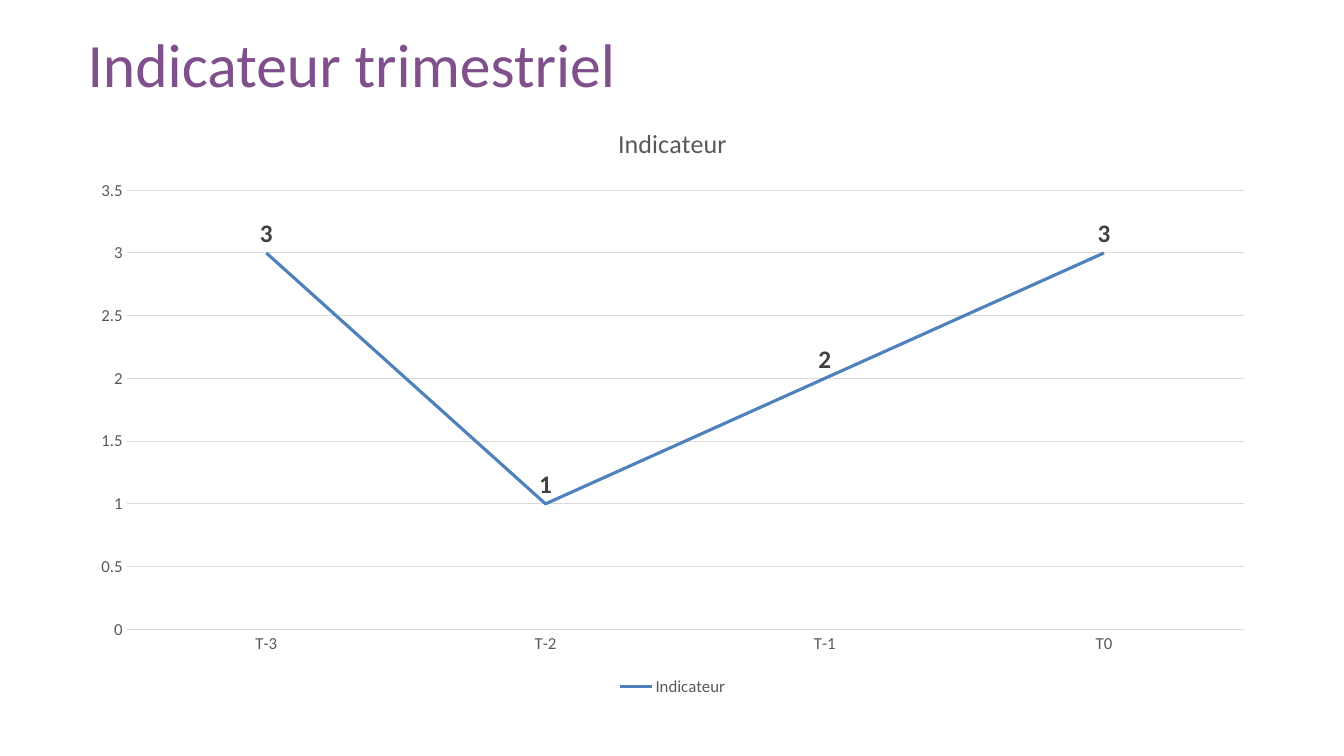
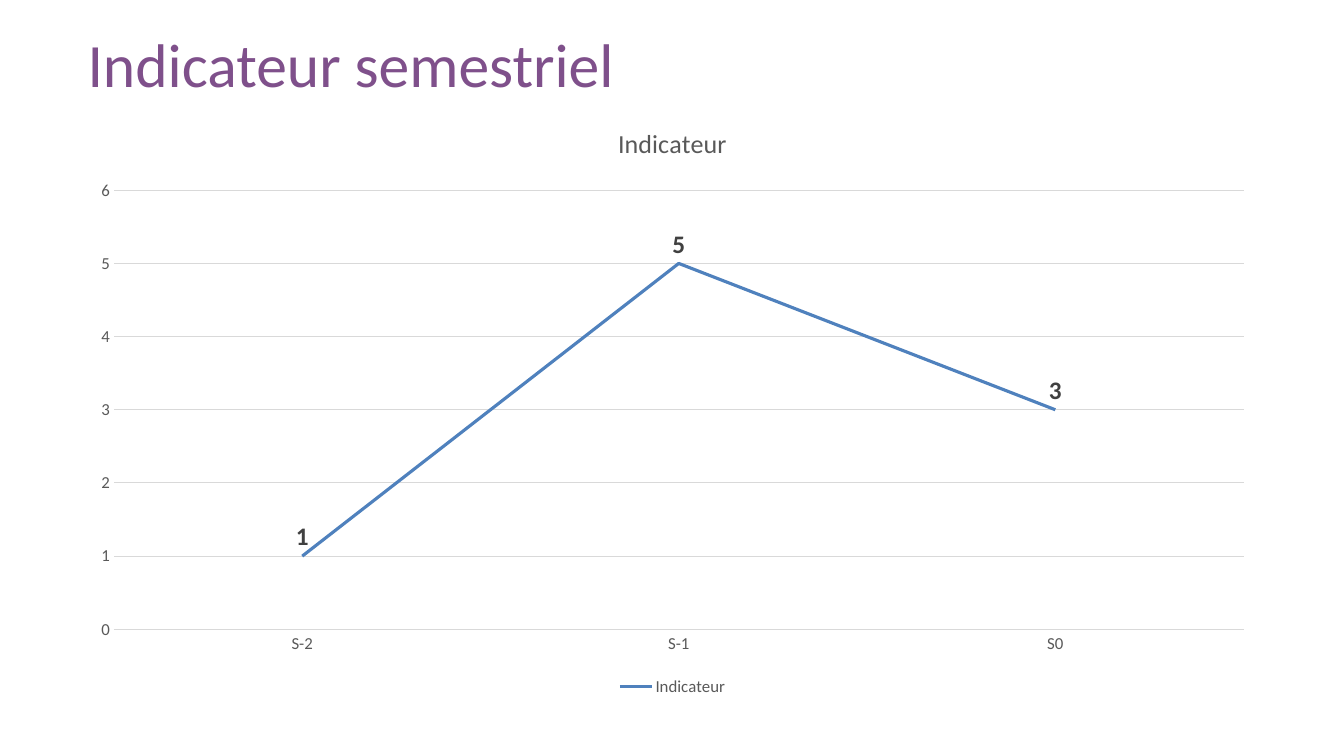
from dataclasses import dataclass

from pptx import Presentation
from pptx.chart.data import CategoryChartData
from pptx.dml.color import RGBColor
from pptx.enum.chart import (XL_CHART_TYPE as ChartType, XL_LABEL_POSITION as LabelPosition,
                             XL_LEGEND_POSITION as LegendPosition, XL_MARKER_STYLE as Marker,
                             XL_TICK_MARK as TickMark)
from pptx.enum.text import MSO_ANCHOR as Anchor
from pptx.util import Inches, Pt

FONT = "Calibri"
PURPLE, BLUE, LIGHT_GRAY = "7F508B", "4F81BD", "D9D9D9"
GRAY, DARK_GRAY = "595959", "404040"
LEFT, WIDTH = Inches(0.77), Inches(11.8)
SERIES_NAME = "Indicateur"


@dataclass(frozen=True)
class IndicatorSlide:
    title: str
    values: dict[str, int]
    axis_maximum: float
    axis_step: float


SLIDES = [
    IndicatorSlide("Indicateur trimestriel", {"T-3": 3, "T-2": 1, "T-1": 2, "T0": 3}, 3.5, 0.5),
    IndicatorSlide("Indicateur semestriel", {"S-2": 1, "S-1": 5, "S0": 3}, 6, 1),
]


def rgb(color: str) -> RGBColor:
    return RGBColor.from_string(color)


def style_font(font, size: float, color: str, bold: bool = False) -> None:
    font.name = FONT
    font.size = Pt(size)
    font.bold = bold
    font.color.rgb = rgb(color)


def style_line(line, color: str, width: float) -> None:
    line.color.rgb = rgb(color)
    line.width = Pt(width)


def add_title(page, text: str) -> None:
    box = page.shapes.add_textbox(LEFT, Inches(0.18), WIDTH, Inches(0.98))
    frame = box.text_frame
    frame.word_wrap = True
    frame.vertical_anchor = Anchor.MIDDLE
    para = frame.paragraphs[0]
    para.text = text
    para.line_spacing = 0.9
    style_font(para.font, 44, PURPLE)


def style_axes(chart, maximum: float, step: float) -> None:
    for axis in (chart.category_axis, chart.value_axis):
        axis.major_tick_mark = axis.minor_tick_mark = TickMark.NONE
        style_font(axis.tick_labels.font, 12, GRAY)
    style_line(chart.category_axis.format.line, LIGHT_GRAY, 0.75)
    value_axis = chart.value_axis
    value_axis.minimum_scale = 0
    value_axis.maximum_scale = maximum
    value_axis.major_unit = step
    value_axis.format.line.fill.background()
    style_line(value_axis.major_gridlines.format.line, LIGHT_GRAY, 0.75)


def style_series(series) -> None:
    series.smooth = False
    series.marker.style = Marker.NONE
    style_line(series.format.line, BLUE, 2.25)
    labels = series.data_labels
    labels.show_value = True
    labels.position = LabelPosition.ABOVE
    style_font(labels.font, 18, DARK_GRAY, bold=True)


def add_line_chart(page, content: IndicatorSlide) -> None:
    data = CategoryChartData()
    data.categories = list(content.values)
    data.add_series(SERIES_NAME, list(content.values.values()))
    chart = page.shapes.add_chart(ChartType.LINE, LEFT, Inches(1.02), WIDTH, Inches(5.93),
                                  data).chart
    style_font(chart.font, 10, "000000")
    chart.has_title = True
    heading = chart.chart_title.text_frame.paragraphs[0]
    heading.text = SERIES_NAME
    style_font(heading.font, 18.6, GRAY)
    chart.chart_title.include_in_layout = False
    chart.has_legend = True
    chart.legend.position = LegendPosition.BOTTOM
    chart.legend.include_in_layout = False
    style_font(chart.legend.font, 12, GRAY)
    style_axes(chart, content.axis_maximum, content.axis_step)
    plot = chart.plots[0]
    plot.vary_by_categories = False
    style_series(plot.series[0])


def main() -> None:
    deck = Presentation()
    deck.slide_width, deck.slide_height = Inches(13.33), Inches(7.5)
    for content in SLIDES:
        page = deck.slides.add_slide(deck.slide_layouts[6])
        add_title(page, content.title)
        add_line_chart(page, content)
    deck.save("out.pptx")


if __name__ == "__main__":
    main()
